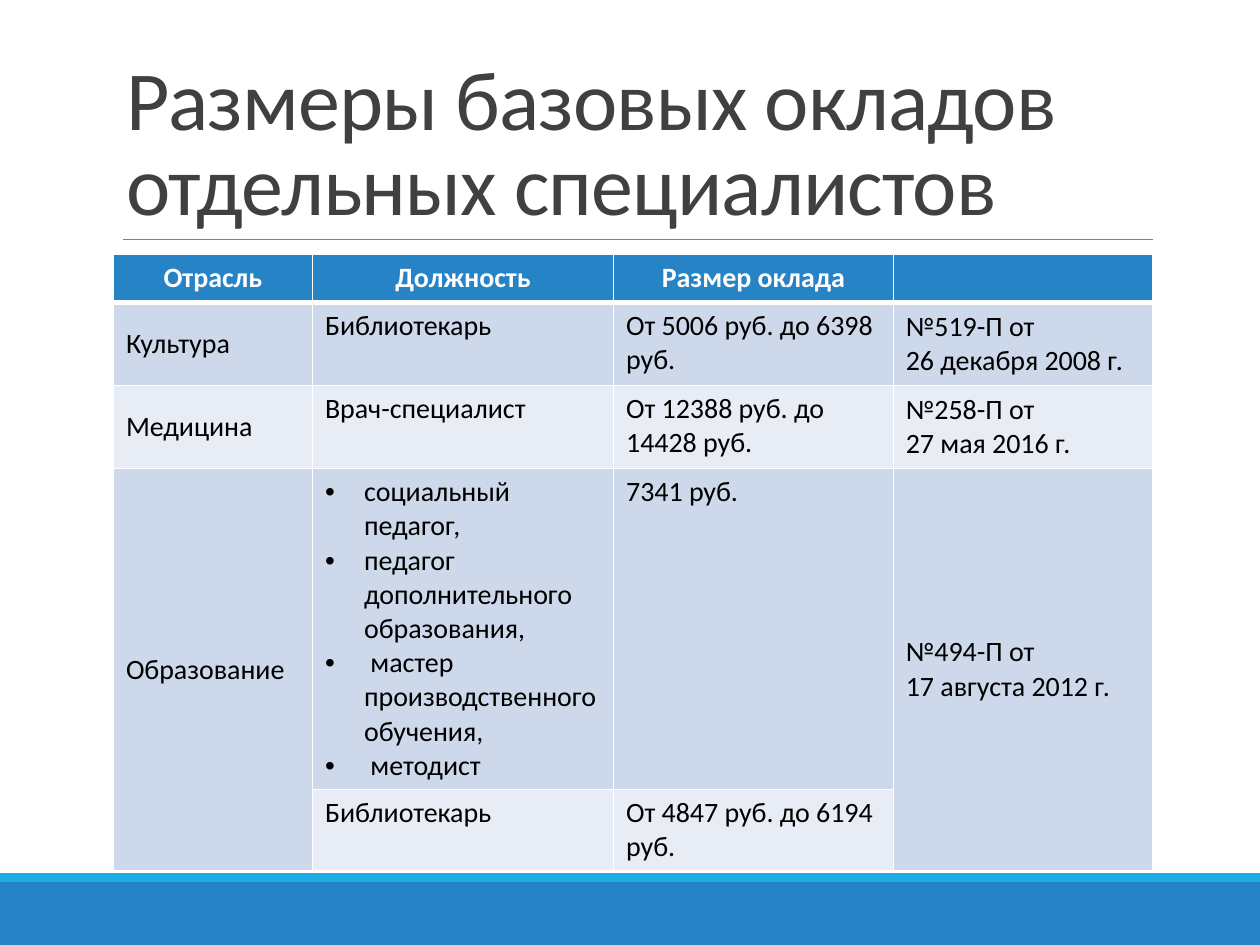
from lxml.etree import SubElement
from pptx import Presentation
from pptx.dml.color import RGBColor as Color
from pptx.enum.shapes import MSO_CONNECTOR as Connector, MSO_SHAPE as Shape
from pptx.enum.text import MSO_ANCHOR as Anchor, MSO_AUTO_SIZE as AutoSize, PP_ALIGN as Align
from pptx.oxml import parse_xml
from pptx.oxml.ns import nsdecls, qn
from pptx.util import Inches, Pt

COLORS = {
    "band": "2683C6", "stripe": "1CADE4", "rule": "808080", "title": "404040",
    "header": "2683C6", "odd": "CDD9EA", "even": "E8EDF5",
    "white": "FFFFFF", "black": "000000",
}
HEADERS = ["Отрасль", "Должность", "Размер оклада", ""]
ROWS = [
    ["Культура", "Библиотекарь", "От 5006 руб. до 6398 руб.", "№519-П от\n26 декабря 2008 г."],
    ["Медицина", "Врач-специалист", "От 12388 руб. до 14428 руб.", "№258-П от\n27 мая 2016 г."],
    ["Образование",
     "социальный педагог,\nпедагог дополнительного образования,\n"
     " мастер производственного обучения,\n методист",
     "7341 руб.", "№494-П от\n17 августа 2012 г."],
    ["", "Библиотекарь", "От 4847 руб. до 6194 руб.", ""],
]
COLUMN_SHARES = [15.8, 23.9, 22.2, 20.6]
ROW_SHARES = [5.07, 8.8, 8.8, 33.07, 8.27]

deck = Presentation()
deck.slide_width, deck.slide_height = Inches(10), Inches(7.5)


def across(percent):
    return round(deck.slide_width * percent / 100)


def down(percent):
    return round(deck.slide_height * percent / 100)


page = deck.slides.add_slide(deck.slide_layouts[5])

for name, top, height in [("band", 93.33, 6.67), ("stripe", 92.4, 0.93)]:
    bar = page.shapes.add_shape(Shape.RECTANGLE, 0, down(top), across(100), down(height))
    bar.shadow.inherit = False
    bar.fill.solid()
    bar.fill.fore_color.rgb = Color.from_string(COLORS[name])
    bar.line.fill.background()

rule = page.shapes.add_connector(
    Connector.STRAIGHT, across(9.8), down(25.33), across(91.5), down(25.33))
rule.line.color.rgb = Color.from_string(COLORS["rule"])
rule.line.width = Pt(0.5)
SubElement(rule.element.spPr, qn("a:effectLst"))

title = page.shapes.title
title_place = {"left": across(9), "top": down(4.13), "width": across(82.5), "height": down(21.2)}
for key, value in title_place.items():
    setattr(title, key, value)
frame = title.text_frame
frame.text = "Размеры базовых окладов отдельных специалистов"
frame_format = {"word_wrap": True, "auto_size": AutoSize.NONE, "vertical_anchor": Anchor.BOTTOM}
for key, value in frame_format.items():
    setattr(frame, key, value)
para = frame.paragraphs[0]
para.alignment = Align.LEFT
para.line_spacing = 0.85
span = para.runs[0]
for key, value in {"name": "Calibri", "size": Pt(48), "bold": False}.items():
    setattr(span.font, key, value)
span.font.color.rgb = Color.from_string(COLORS["title"])
span.font._element.set("spc", "-50")

table = page.shapes.add_table(
    len(ROW_SHARES), len(COLUMN_SHARES), across(9), down(26.93),
    across(sum(COLUMN_SHARES)), down(sum(ROW_SHARES))).table
for column, share in zip(table.columns, COLUMN_SHARES):
    column.width = across(share)
for row, share in zip(table.rows, ROW_SHARES):
    row.height = down(share)

for row_index, texts in enumerate([HEADERS] + ROWS):
    is_header = row_index == 0
    fill_name = "header" if is_header else "odd" if row_index % 2 else "even"
    text_name = "white" if is_header else "black"
    for column_index, text in enumerate(texts):
        cell = table.cell(row_index, column_index)
        cell.text = text
        is_outer = column_index in (0, 3)
        cell.vertical_anchor = Anchor.MIDDLE if is_outer and not is_header else Anchor.TOP
        cell.fill.solid()
        cell.fill.fore_color.rgb = Color.from_string(COLORS[fill_name])
        widths = {"L": 1, "R": 1, "T": 3 if row_index == 1 else 1, "B": 3 if is_header else 1}
        for position, (side, width) in enumerate(widths.items()):
            border = parse_xml(
                f'<a:ln{side} {nsdecls("a")} w="{Pt(width)}"><a:solidFill>'
                f'<a:srgbClr val="{COLORS["white"]}"/></a:solidFill></a:ln{side}>')
            cell._tc.get_or_add_tcPr().insert(position, border)
        paragraphs = cell.text_frame.paragraphs
        for para in paragraphs:
            para.alignment = Align.CENTER if is_header else Align.LEFT
            font_format = {"name": "Calibri", "size": Pt(16), "bold": is_header}
            for key, value in font_format.items():
                setattr(para.font, key, value)
                for span in para.runs:
                    setattr(span.font, key, value)
            for span in para.runs:
                span.font.color.rgb = Color.from_string(COLORS[text_name])
            if column_index == 1 and len(paragraphs) > 1:
                settings = para._p.get_or_add_pPr()
                settings.set("marL", str(Inches(0.31)))
                settings.set("indent", str(-Inches(0.31)))
                settings.insert(0, parse_xml(f'<a:buChar {nsdecls("a")} char="•"/>'))
                settings.insert(0, parse_xml(f'<a:buFont {nsdecls("a")} typeface="Arial"/>'))

for column_index in (0, 3):
    table.cell(3, column_index).merge(table.cell(4, column_index))

deck.save("out.pptx")
